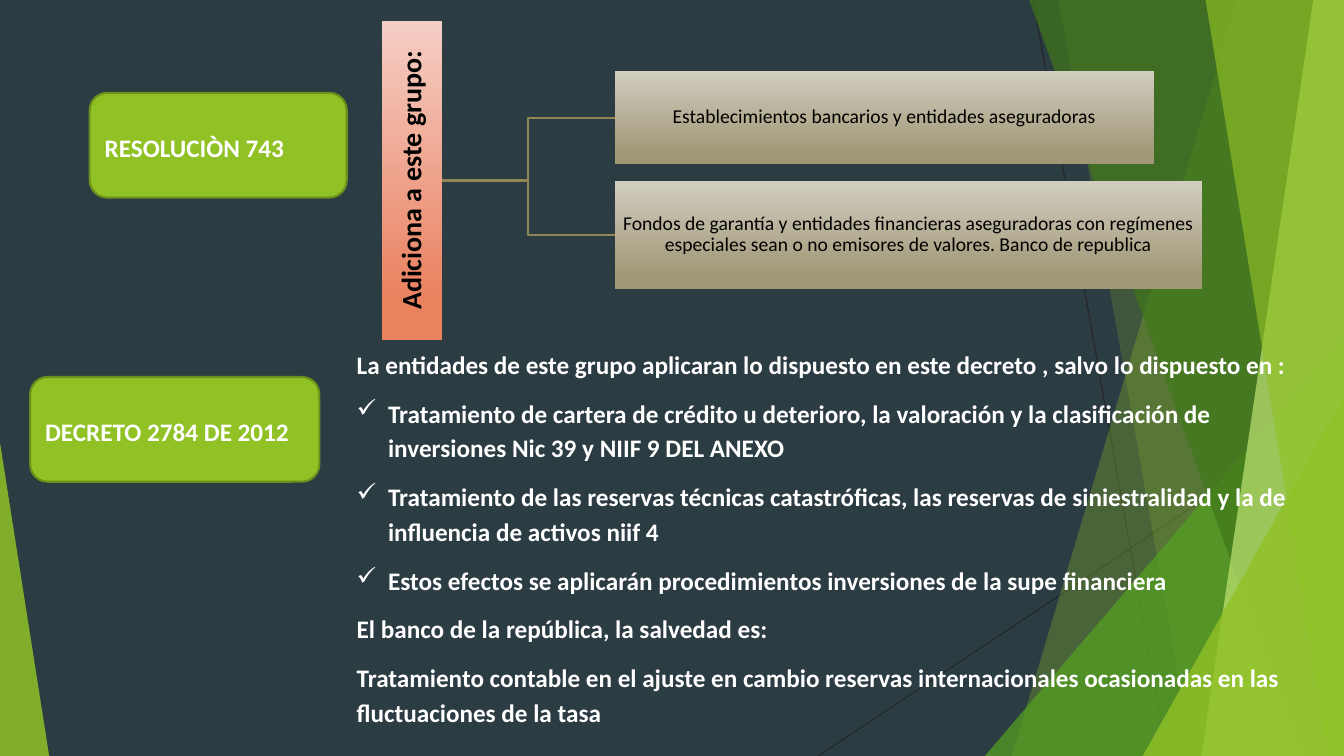
from lxml import etree
from pptx import Presentation
from pptx.dml.color import RGBColor
from pptx.enum.shapes import MSO_CONNECTOR, MSO_SHAPE
from pptx.enum.text import MSO_ANCHOR, MSO_AUTO_SIZE, PP_ALIGN
from pptx.oxml.ns import qn
from pptx.util import Cm, Pt

COLORS = {
    "background": "2C3C43", "hairline": "262626", "lime": "90C226",
    "green": "54A021", "forest": "3F7819", "pale": "C0E474",
    "border": "6B901C", "branch": "918655", "white": "FFFFFF", "black": "000000",
    "rose": "F5CEC5", "coral": "EA815F", "sand": "D1CDC0", "khaki": "A19877",
}
RGB = {name: RGBColor.from_string(value) for name, value in COLORS.items()}
WIDTH, HEIGHT = 33.87, 19.05


def paint(sp, color, opacity=100):
    sp.shadow.inherit = False
    sp.line.fill.background()
    sp.fill.solid()
    sp.fill.fore_color.rgb = RGB[color]
    if opacity < 100:
        clr = sp.fill._xPr.find(qn("a:solidFill"))[0]
        etree.SubElement(clr, qn("a:alpha"), val=str(opacity * 1000))


def write(sp, lines, size, color, bold, align, spacing, after):
    tf = sp.text_frame
    tf.word_wrap = True
    tf.text = "\n".join(lines)
    for p in tf.paragraphs:
        p.alignment = align
        p.line_spacing = spacing
        p.space_after = Pt(after)
        font = p.runs[0].font
        font.name, font.size, font.bold = "Calibri", Pt(size), bold
        font.color.rgb = RGB[color]
    return tf


prs = Presentation()
prs.slide_width, prs.slide_height = Cm(WIDTH), Cm(HEIGHT)
slide = prs.slides.add_slide(prs.slide_layouts[6])
slide.background.fill.solid()
slide.background.fill.fore_color.rgb = RGB["background"]
shapes = slide.shapes

for ends in [(26.04, 0, 29.41, HEIGHT), (WIDTH, 10.24, 20.62, HEIGHT)]:
    line = shapes.add_connector(MSO_CONNECTOR.STRAIGHT, *map(Cm, ends))
    line.line.color.rgb = RGB["hairline"]
    line.line.width = Pt(0.75)
    etree.SubElement(line._element.spPr, qn("a:effectLst"))

facets = [
    ("band", (31.19, 25.5), "lime", 30),
    ("band", (26.67, 30.05), "lime", 20),
    ("triangle", (24.82, 8.46, 9.05, 1), "green", 72),
    ("band", (25.93, 32.79), "forest", 70),
    ("band", (33.1, 30.28), "pale", 70),
    ("band", (30.38, 33.48), "lime", 65),
    ("triangle", (28.8, 9.98, 5.07, 1), "lime", 80),
    ("triangle", (0, 11.15, 1.24, 0), "lime", 85),
]
for kind, geometry, color, opacity in facets:
    if kind == "band":
        top_x, bottom_x = geometry
        builder = shapes.build_freeform(Cm(top_x), Cm(-0.02))
        corners = [(WIDTH, -0.02), (WIDTH, HEIGHT), (bottom_x, HEIGHT)]
        builder.add_line_segments([(Cm(x), Cm(y)) for x, y in corners])
        sp = builder.convert_to_shape()
    else:
        left, top, width, apex = geometry
        sp = shapes.add_shape(MSO_SHAPE.ISOSCELES_TRIANGLE, Cm(left), Cm(top),
                              Cm(width), Cm(HEIGHT - top))
        sp.adjustments[0] = apex
    paint(sp, color, opacity)

body = [
    (False, "La entidades de este grupo aplicaran lo dispuesto en este decreto , salvo lo dispuesto en :"),
    (True, "Tratamiento de cartera de crédito u deterioro, la valoración y la clasificación de inversiones Nic 39 y NIIF 9 DEL ANEXO"),
    (True, "Tratamiento de las reservas técnicas catastróficas, las reservas de siniestralidad y la de influencia de activos niif 4"),
    (True, "Estos efectos se aplicarán procedimientos inversiones de la supe financiera"),
    (False, "El banco de la república, la salvedad es:"),
    (False, "Tratamiento contable en el ajuste en cambio reservas internacionales ocasionadas en las fluctuaciones de la tasa"),
]
box = shapes.add_textbox(Cm(8.74), Cm(8.56), Cm(24.31), Cm(10.01))
tf = write(box, [text for _, text in body], 18, "white", True, PP_ALIGN.LEFT, 1.15, 10)
tf.auto_size = MSO_AUTO_SIZE.SHAPE_TO_FIT_TEXT
for (checked, _), p in zip(body, tf.paragraphs):
    if checked:
        pPr = p._p.get_or_add_pPr()
        pPr.set("marL", str(Cm(0.79)))
        pPr.set("indent", str(-Cm(0.79)))
        etree.SubElement(pPr, qn("a:buChar"), char="✓")

rules = [
    ("RESOLUCIÒN 743", 2.26, 2.34, 6.48),
    ("DECRETO 2784 DE 2012", 0.76, 9.5, 7.29),
]
for text, left, top, width in rules:
    sp = shapes.add_shape(MSO_SHAPE.ROUNDED_RECTANGLE, Cm(left), Cm(top), Cm(width), Cm(2.64))
    paint(sp, "lime")
    sp.line.color.rgb = RGB["border"]
    sp.line.width = Pt(1.5)
    tf = write(sp, [text], 18, "white", True, PP_ALIGN.LEFT, 1.15, 10)
    tf.vertical_anchor = MSO_ANCHOR.MIDDLE

for end_y in (5.92, 2.97):
    builder = shapes.build_freeform(Cm(11.15), Cm(4.55))
    elbow = [(13.31, 4.55), (13.31, end_y), (15.49, end_y)]
    builder.add_line_segments([(Cm(x), Cm(y)) for x, y in elbow], close=False)
    sp = builder.convert_to_shape()
    sp.shadow.inherit = False
    sp.fill.background()
    sp.line.color.rgb = RGB["branch"]
    sp.line.width = Pt(1.5)

nodes = [
    ("Adiciona a este grupo:", (9.63, 0.52, 1.52, 8.05), "rose", "coral", 20, True),
    ("Establecimientos bancarios y entidades aseguradoras",
     (15.49, 1.78, 13.59, 2.36), "sand", "khaki", 14, False),
    ("Fondos de garantía y entidades financieras aseguradoras con regímenes especiales sean o no emisores de valores. Banco de republica",
     (15.49, 4.55, 14.81, 2.74), "sand", "khaki", 14, False),
]
for text, place, light, dark, size, is_root in nodes:
    sp = shapes.add_shape(MSO_SHAPE.RECTANGLE, *map(Cm, place))
    sp.shadow.inherit = False
    sp.line.fill.background()
    sp.fill.gradient()
    sp.fill.gradient_angle = 270
    for stop, color, position in zip(sp.fill.gradient_stops, (light, dark), (0, 0.88)):
        stop.color.rgb = RGB[color]
        stop.position = position
    tf = write(sp, [text], size, "black", is_root, PP_ALIGN.CENTER, 0.9, 0)
    tf.vertical_anchor = MSO_ANCHOR.MIDDLE
    tf.margin_left = tf.margin_right = tf.margin_top = tf.margin_bottom = Cm(0.03)
    if is_root:
        tf._txBody.bodyPr.set("vert", "vert270")

prs.save("out.pptx")
